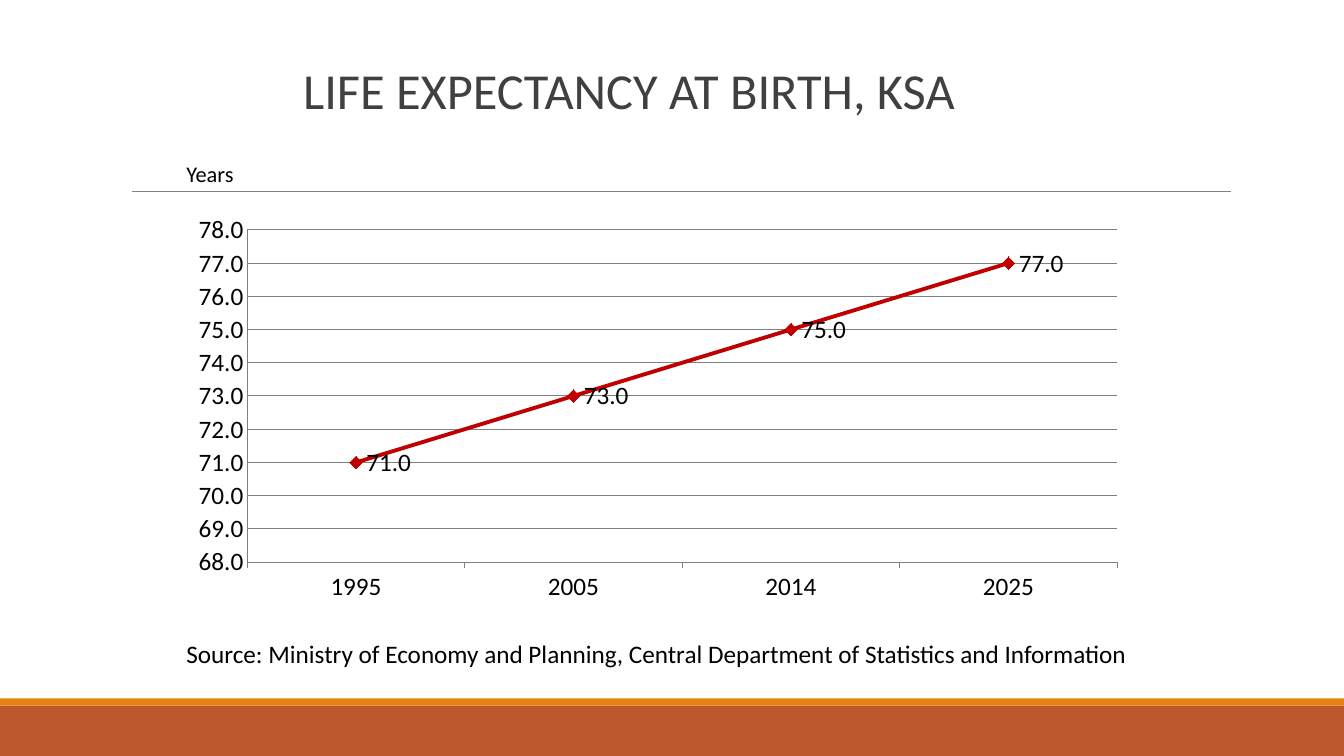
from lxml import etree
from pptx import Presentation
from pptx.chart.data import CategoryChartData
from pptx.dml.color import RGBColor
from pptx.enum.chart import XL_CHART_TYPE, XL_LABEL_POSITION, XL_MARKER_STYLE, XL_TICK_MARK
from pptx.enum.shapes import MSO_CONNECTOR, MSO_SHAPE
from pptx.enum.text import MSO_ANCHOR, MSO_AUTO_SIZE, PP_ALIGN
from pptx.oxml import parse_xml
from pptx.oxml.ns import nsdecls, qn
from pptx.util import Inches, Pt

LINE_CHART = XL_CHART_TYPE.LINE_MARKERS
LABEL_RIGHT = XL_LABEL_POSITION.RIGHT
DIAMOND = XL_MARKER_STYLE.DIAMOND
TICK_NONE, TICK_OUTSIDE = XL_TICK_MARK.NONE, XL_TICK_MARK.OUTSIDE
STRAIGHT = MSO_CONNECTOR.STRAIGHT
RECTANGLE = MSO_SHAPE.RECTANGLE
TOP = MSO_ANCHOR.TOP
FIT_NONE, FIT_SHAPE = MSO_AUTO_SIZE.NONE, MSO_AUTO_SIZE.SHAPE_TO_FIT_TEXT
CENTER = PP_ALIGN.CENTER

FONT = "Calibri"
COLORS = {"rust": "BD582C", "orange": "E48312", "rule": "808080",
          "title": "404040", "text": "000000", "series": "C00000"}
LIFE_EXPECTANCY = {"1995": 71, "2005": 73, "2014": 75, "2025": 77}
PLOT_AREA = {"x": 0.063, "y": 0.03, "w": 0.916, "h": 0.765}


def color(name):
    return RGBColor.from_string(COLORS[name])


def set_values(target, **values):
    for name, value in values.items():
        setattr(target, name, value)


def style_font(font, size, color_name):
    set_values(font, name=FONT, size=Pt(size), bold=False)
    font.color.rgb = color(color_name)


def style_line(line, color_name, width):
    line.color.rgb = color(color_name)
    line.width = Pt(width)


def add_band(page, top, height, color_name):
    band = page.shapes.add_shape(RECTANGLE, 0, Inches(top), Inches(13.33), Inches(height))
    band.shadow.inherit = False
    band.fill.solid()
    band.fill.fore_color.rgb = color(color_name)
    band.line.fill.background()


def add_rule(page, left, right, top):
    rule = page.shapes.add_connector(STRAIGHT, Inches(left), Inches(top),
                                     Inches(right), Inches(top))
    style_line(rule.line, "rule", 0.5)
    etree.SubElement(rule.element.spPr, qn("a:effectLst"))


def set_title(page, text):
    title = page.shapes.title
    set_values(title, left=Inches(1.44), top=Inches(0.6), width=Inches(9.6), height=Inches(0.71))
    frame = title.text_frame
    set_values(frame, margin_left=0, margin_right=0, margin_top=Inches(0.05),
               margin_bottom=Inches(0.05), vertical_anchor=TOP,
               auto_size=FIT_NONE, word_wrap=True)
    para = frame.paragraphs[0]
    para.text = text
    set_values(para, alignment=CENTER, line_spacing=0.9, space_before=Pt(0), space_after=Pt(2))
    style_font(para.font, 36, "title")


def add_label(page, text, top, width, height, size):
    box = page.shapes.add_textbox(Inches(1.75), Inches(top), Inches(width), Inches(height))
    set_values(box.text_frame, word_wrap=False, auto_size=FIT_SHAPE)
    para = box.text_frame.paragraphs[0]
    para.text = text
    style_font(para.font, size, "text")


def place_plot(chart):
    plot_area = chart.plots[0]._element.getparent()
    for layout in plot_area.findall(qn("c:layout")):
        plot_area.remove(layout)
    modes = '<c:xMode val="edge"/><c:yMode val="edge"/>'
    sizes = "".join(f'<c:{side} val="{share}"/>' for side, share in PLOT_AREA.items())
    plot_area.insert(0, parse_xml(
        f'<c:layout {nsdecls("c")}><c:manualLayout><c:layoutTarget val="inner"/>'
        f'{modes}{sizes}</c:manualLayout></c:layout>'))


def add_life_chart(page):
    data = CategoryChartData(number_format="0.0")
    data.categories = list(LIFE_EXPECTANCY)
    data.add_series("Series 1", list(LIFE_EXPECTANCY.values()))
    chart = page.shapes.add_chart(LINE_CHART, Inches(1.86), Inches(2.13),
                                  Inches(9.42), Inches(4.33), data).chart
    set_values(chart, has_legend=False, has_title=False)
    style_font(chart.font, 18, "text")
    place_plot(chart)

    years, values = chart.category_axis, chart.value_axis
    set_values(years, major_tick_mark=TICK_OUTSIDE, minor_tick_mark=TICK_NONE,
               has_major_gridlines=False)
    set_values(values, major_tick_mark=TICK_NONE, minor_tick_mark=TICK_NONE,
               has_major_gridlines=True, minimum_scale=68, maximum_scale=78, major_unit=1)
    set_values(values.tick_labels, number_format="0.0", number_format_is_linked=False)
    for line in (years.format.line, values.format.line, values.major_gridlines.format.line):
        style_line(line, "rule", 0.75)

    plot = chart.plots[0]
    plot.vary_by_categories = False
    series = plot.series[0]
    series.smooth = False
    style_line(series.format.line, "series", 2.75)
    set_values(series.marker, style=DIAMOND, size=9)
    series.marker.format.fill.solid()
    series.marker.format.fill.fore_color.rgb = color("series")
    style_line(series.marker.format.line, "series", 0.75)
    labels = series.data_labels
    set_values(labels, show_value=True, number_format="0.0",
               number_format_is_linked=False, position=LABEL_RIGHT)
    style_font(labels.font, 18, "text")


def main():
    deck = Presentation()
    set_values(deck, slide_width=Inches(13.33), slide_height=Inches(7.5))
    page = deck.slides.add_slide(deck.slide_layouts[5])
    add_band(page, 7, 0.5, "rust")
    add_band(page, 6.93, 0.07, "orange")
    add_rule(page, 1.31, 12.21, 1.9)
    set_title(page, "LIFE EXPECTANCY AT BIRTH, KSA")
    add_life_chart(page)
    add_label(page, "Years", 1.54, 0.7, 0.37, 16)
    add_label(page, "Source: Ministry of Economy and Planning, Central Department of "
              "Statistics and Information", 6.28, 9.64, 0.4, 18)
    deck.save("out.pptx")


if __name__ == "__main__":
    main()
